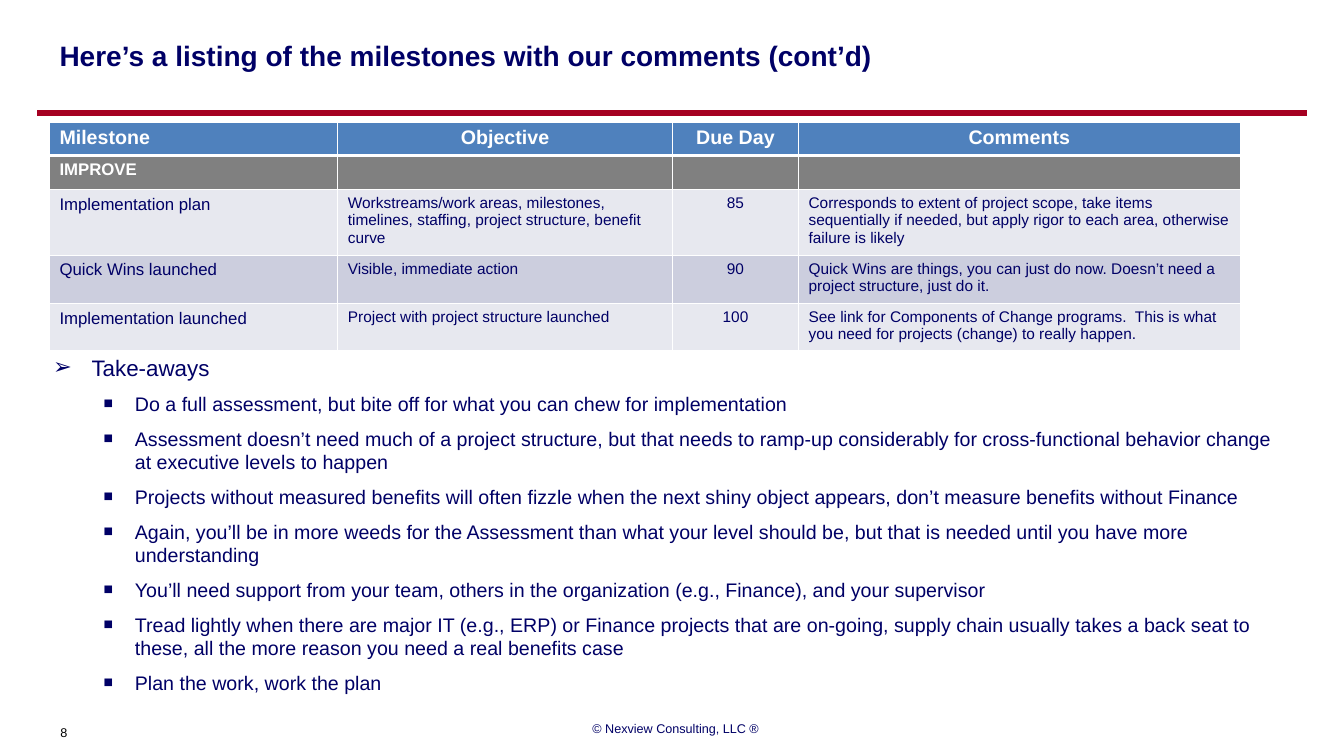
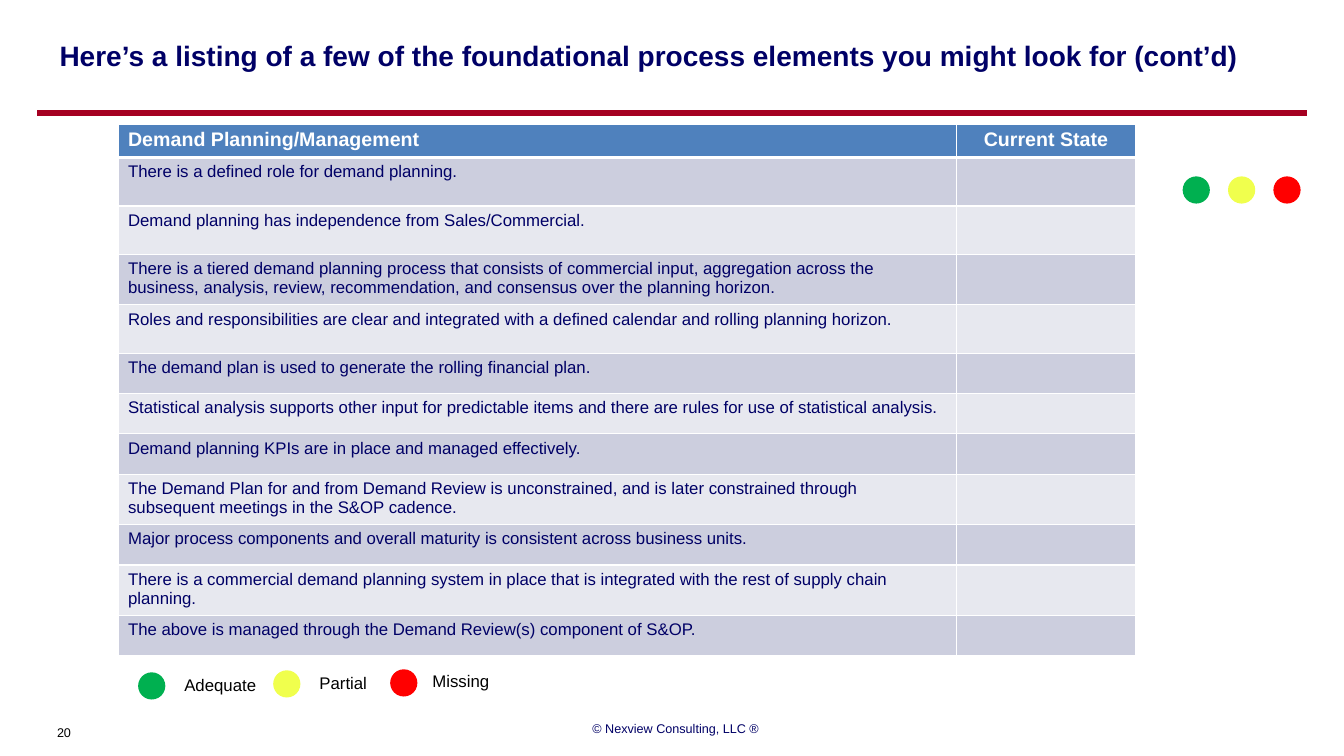
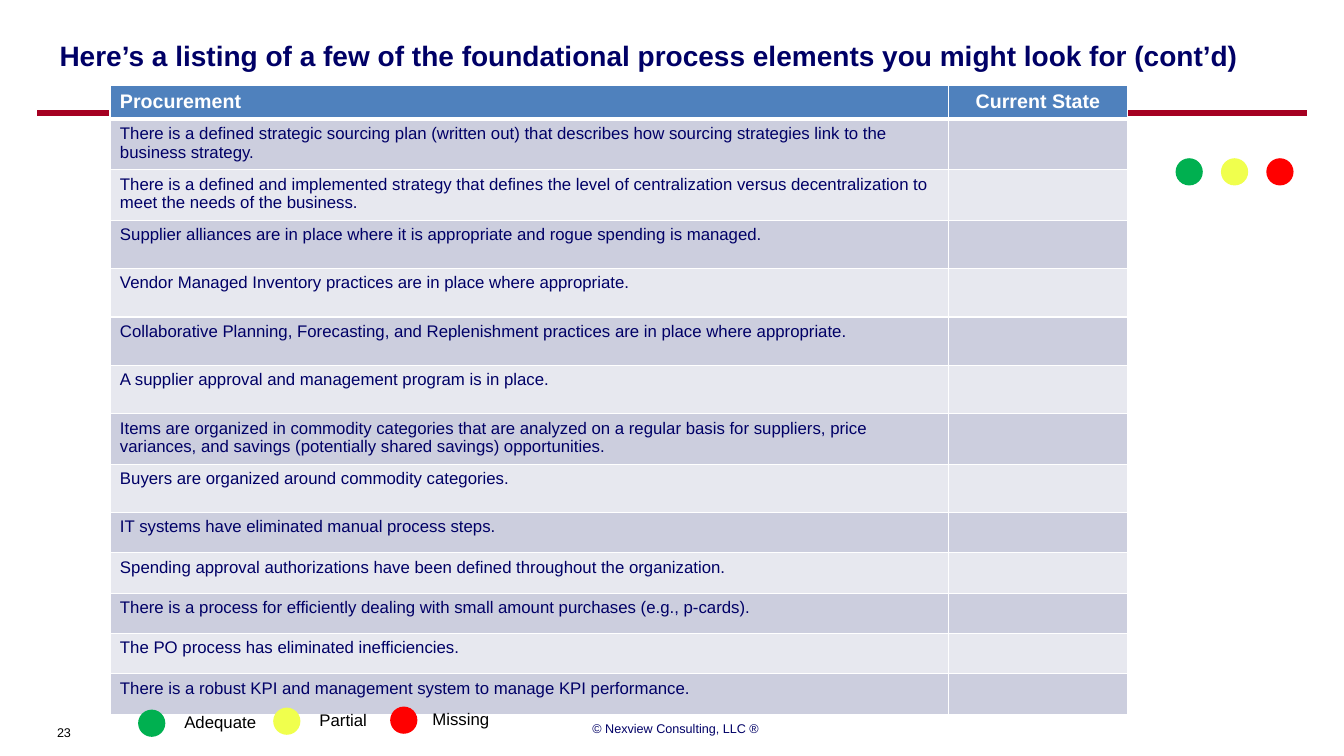
"""Build three consulting slides: milestone comments and two process checklists."""
import pptx
import pptx.dml.color
import pptx.enum.shapes
import pptx.enum.text
import pptx.oxml.ns
import pptx.util
import lxml.etree

Inches = pptx.util.Inches
Pt = pptx.util.Pt
qn = pptx.oxml.ns.qn
ALIGN = pptx.enum.text.PP_ALIGN
ANCHOR = pptx.enum.text.MSO_ANCHOR
SHAPE = pptx.enum.shapes.MSO_SHAPE

NAVY, CRIMSON, BLACK, WHITE = "000066", "A50021", "000000", "FFFFFF"
HEADER_BLUE, SECTION_GREY = "4F81BD", "808080"
BANDS = ("E7E8EF", "CCCEDE")
GREEN, YELLOW, RED = "00B050", "F0FF4D", "FF0000"
FONT = "Arial"
COPYRIGHT = "© Nexview Consulting, LLC ®"
CHECKLIST_TITLE = "Here’s a listing of a few of the foundational process elements you might look for (cont’d)"
DOT, DOT_STEP = 0.27, 0.45
LEGEND = [
    ("Adequate", GREEN, 1.37, 0.36, 1.03, 0),
    ("Partial", YELLOW, 2.71, 0.36, 0.76, -0.02),
    ("Missing", RED, 3.87, 0.32, 1.38, -0.03),
]

MILESTONES = {
    "title": "Here’s a listing of the milestones with our comments (cont’d)",
    "page": 8,
    "at": (0.49, 1.21),
    "columns": (2.86, 3.32, 1.25, 4.38),
    "sizes": (12, 11, 11, 11),
    "centred": (2,),
    "heights": (0.32, 0.34, 0.61, 0.48, 0.45),
    "rows": [
        ("Milestone", "Objective", "Due Day", "Comments"),
        ("IMPROVE", "", "", ""),
        ("Implementation plan",
         "Workstreams/work areas, milestones, timelines, staffing, project structure, benefit curve",
         "85",
         "Corresponds to extent of project scope, take items sequentially if needed, "
         "but apply rigor to each area, otherwise failure is likely"),
        ("Quick Wins launched", "Visible, immediate action", "90",
         "Quick Wins are things, you can just do now. Doesn’t need a project structure, just do it."),
        ("Implementation launched", "Project with project structure launched", "100",
         "See link for Components of Change programs.  "
         "This is what you need for projects (change) to really happen."),
    ],
    "section": 1,
}
TAKEAWAYS = [
    "Take-aways",
    "Do a full assessment, but bite off for what you can chew for implementation",
    "Assessment doesn’t need much of a project structure, but that needs to ramp-up considerably "
    "for cross-functional behavior change at executive levels to happen",
    "Projects without measured benefits will often fizzle when the next shiny object appears, "
    "don’t measure benefits without Finance",
    "Again, you’ll be in more weeds for the Assessment than what your level should be, "
    "but that is needed until you have more understanding",
    "You’ll need support from your team, others in the organization (e.g., Finance), and your supervisor",
    "Tread lightly when there are major IT (e.g., ERP) or Finance projects that are on-going, "
    "supply chain usually takes a back seat to these, all the more reason you need a real benefits case",
    "Plan the work, work the plan",
]
CHECKLISTS = [
    {
        "page": 20,
        "at": (1.17, 1.23),
        "heights": (0.32, *[0.48] * 4, *[0.4] * 3, 0.48, 0.4, 0.48, 0.4),
        "legend_top": 6.67,
        "dots_at": (11.73, 1.75),
        "heading": "Demand Planning/Management",
        "elements": [
            "There is a defined role for demand planning.",
            "Demand planning has independence from Sales/Commercial.",
            "There is a tiered demand planning process that consists of commercial input, aggregation "
            "across the business, analysis, review, recommendation, and consensus over the planning horizon.",
            "Roles and responsibilities are clear and integrated with a defined calendar and rolling "
            "planning horizon.",
            "The demand plan is used to generate the rolling financial plan.",
            "Statistical analysis supports other input for predictable items and there are rules for "
            "use of statistical analysis.",
            "Demand planning KPIs are in place and managed effectively.",
            "The Demand Plan for and from Demand Review is unconstrained, and is later constrained "
            "through subsequent meetings in the S&OP cadence.",
            "Major process components and overall maturity is consistent across business units.",
            "There is a commercial demand planning system in place that is integrated with the rest of "
            "supply chain planning.",
            "The above is managed through the Demand Review(s) component of S&OP.",
        ],
    },
    {
        "page": 23,
        "at": (1.09, 0.85),
        "heights": (0.32, *[0.48] * 8, *[0.4] * 5),
        "legend_top": 7.04,
        "dots_at": (11.66, 1.57),
        "heading": "Procurement",
        "elements": [
            "There is a defined strategic sourcing plan (written out) that describes how sourcing "
            "strategies link to the business strategy.",
            "There is a defined and implemented strategy that defines the level of centralization versus "
            "decentralization to meet the needs of the business.",
            "Supplier alliances are in place where it is appropriate and rogue spending is managed.",
            "Vendor Managed Inventory practices are in place where appropriate.",
            "Collaborative Planning, Forecasting, and Replenishment practices are in place where appropriate.",
            "A supplier approval and management program is in place.",
            "Items are organized in commodity categories that are analyzed on a regular basis for "
            "suppliers, price variances, and savings (potentially shared savings) opportunities.",
            "Buyers are organized around commodity categories.",
            "IT systems have eliminated manual process steps.",
            "Spending approval authorizations have been defined throughout the organization.",
            "There is a process for efficiently dealing with small amount purchases (e.g., p-cards).",
            "The PO process has eliminated inefficiencies.",
            "There is a robust KPI and management system to manage KPI performance.",
        ],
    },
]


def rgb(value):
    """Turn a hex string into a colour."""
    return pptx.dml.color.RGBColor.from_string(value)


def style(target, **values):
    """Set each named attribute on the target."""
    for name, value in values.items():
        setattr(target, name, value)


def write(paragraph, text, size, color, bold=False, **layout):
    """Put one formatted run into a paragraph."""
    style(paragraph, **layout)
    run = paragraph.add_run()
    run.text = text
    style(run.font, name=FONT, size=Pt(size), bold=bold)
    run.font.color.rgb = rgb(color)


def add_text(slide, box, text, size, color, **layout):
    """Add a wrapped text box holding one paragraph."""
    frame = slide.shapes.add_textbox(*map(Inches, box)).text_frame
    frame.word_wrap = True
    write(frame.paragraphs[0], text, size, color, **layout)


def add_dot(slide, left, top, color):
    """Add one status circle."""
    dot = slide.shapes.add_shape(SHAPE.OVAL, *map(Inches, (left, top, DOT, DOT)))
    dot.shadow.inherit = False
    dot.fill.solid()
    dot.fill.fore_color.rgb = rgb(color)
    dot.line.fill.background()


def add_framed_slide(deck, title, page):
    """Add a slide with its title, rule, page number and copyright line."""
    slide = deck.slides.add_slide(deck.slide_layouts[5])
    rule = slide.shapes.add_connector(
        pptx.enum.shapes.MSO_CONNECTOR.STRAIGHT, *map(Inches, (0.37, 1.12, 12.96, 1.12)))
    rule.line.color.rgb = rgb(CRIMSON)
    rule.line.width = Pt(4)
    lxml.etree.SubElement(rule._element.spPr, qn("a:effectLst"))
    heading = slide.shapes.title
    style(heading, left=Inches(0.49), top=Inches(0.26), width=Inches(12.47), height=Inches(0.58))
    style(heading.text_frame, vertical_anchor=ANCHOR.MIDDLE, word_wrap=True,
          auto_size=pptx.enum.text.MSO_AUTO_SIZE.NONE)
    write(heading.text_frame.paragraphs[0], title, 20, NAVY, bold=True, alignment=ALIGN.LEFT)
    add_text(slide, (0.36, 7.16, 0.55, 0.24), str(page), 9, BLACK,
             alignment=ALIGN.CENTER, line_spacing=0.9)
    add_text(slide, (4.59, 7.1, 4.22, 0.4), COPYRIGHT, 9, NAVY, alignment=ALIGN.CENTER)
    return slide


def set_borders(cell, row_index):
    """Draw white cell borders, thick between header and body."""
    heavy = {(0, "lnB"), (1, "lnT")}
    for side in ("lnL", "lnR", "lnT", "lnB"):
        width = Pt(3 if (row_index, side) in heavy else 1)
        border = lxml.etree.SubElement(cell._tc.get_or_add_tcPr(), qn("a:" + side), w=str(int(width)))
        fill = lxml.etree.SubElement(border, qn("a:solidFill"))
        lxml.etree.SubElement(fill, qn("a:srgbClr"), val=WHITE)


def add_grid(slide, at, columns, heights, rows, sizes, centred=(), section=None):
    """Add a banded table with a blue header row."""
    extent = (*at, sum(columns), sum(heights))
    table = slide.shapes.add_table(len(rows), len(columns), *map(Inches, extent)).table
    for column, width in zip(table.columns, columns):
        column.width = Inches(width)
    for r, (row, height) in enumerate(zip(rows, heights)):
        table.rows[r].height = Inches(height)
        strong = r in (0, section)
        fill = HEADER_BLUE if r == 0 else SECTION_GREY if r == section else BANDS[r % 2]
        for c, text in enumerate(row):
            cell = table.cell(r, c)
            set_borders(cell, r)
            cell.fill.solid()
            cell.fill.fore_color.rgb = rgb(fill)
            paragraph = cell.text_frame.paragraphs[0]
            if not text:
                lxml.etree.SubElement(paragraph._p, qn("a:endParaRPr"), sz="1200")
                continue
            middle = c > 0 if r == 0 else c in centred
            write(paragraph, text, 14 if r == 0 else sizes[c], WHITE if strong else NAVY,
                  bold=strong, alignment=ALIGN.CENTER if middle else ALIGN.LEFT)


def add_bullet(paragraph, mark, percent, margin, hanging):
    """Give a paragraph a coloured bullet and a hanging indent."""
    props = paragraph._p.get_or_add_pPr()
    props.set("marL", str(Inches(margin)))
    props.set("indent", str(-Inches(hanging)))
    color = lxml.etree.SubElement(props, qn("a:buClr"))
    lxml.etree.SubElement(color, qn("a:srgbClr"), val=NAVY)
    lxml.etree.SubElement(props, qn("a:buSzPct"), val=str(percent * 1000))
    lxml.etree.SubElement(props, qn("a:buFont"), typeface=FONT)
    lxml.etree.SubElement(props, qn("a:buChar"), char=mark)


def add_takeaways(slide):
    """Add the take-away heading and its bullets."""
    frame = slide.shapes.add_textbox(*map(Inches, (0.43, 3.46, 12.47, 2.97))).text_frame
    frame.word_wrap = True
    for i, text in enumerate(TAKEAWAYS):
        paragraph = frame.add_paragraph() if i else frame.paragraphs[0]
        if i:
            add_bullet(paragraph, "■", 80, 0.81, 0.31)
            write(paragraph, text, 14, NAVY, level=1, space_before=Pt(8))
        else:
            add_bullet(paragraph, "➢", 100, 0.38, 0.38)
            write(paragraph, text, 16, NAVY)


def add_checklist(deck, checklist):
    """Add one checklist slide with its legend and spare status dots."""
    slide = add_framed_slide(deck, CHECKLIST_TITLE, checklist["page"])
    rows = [(checklist["heading"], "Current State")]
    rows += [(element, "") for element in checklist["elements"]]
    add_grid(slide, checklist["at"], (8.32, 1.77), checklist["heights"], rows, (12, 12))
    for label, color, left, gap, width, shift in LEGEND:
        top = checklist["legend_top"] + shift
        add_dot(slide, left, top, color)
        add_text(slide, (left + gap, top - 0.03, width, 0.3), label, 12, BLACK)
    left, top = checklist["dots_at"]
    for i, color in enumerate((GREEN, YELLOW, RED)):
        add_dot(slide, left + i * DOT_STEP, top, color)


def main():
    """Build and save the deck."""
    deck = pptx.Presentation()
    style(deck, slide_width=Inches(13.33), slide_height=Inches(7.5))
    table = dict(MILESTONES)
    slide = add_framed_slide(deck, table.pop("title"), table.pop("page"))
    add_grid(slide, **table)
    add_takeaways(slide)
    for checklist in CHECKLISTS:
        add_checklist(deck, checklist)
    deck.save("out.pptx")


if __name__ == "__main__":
    main()
